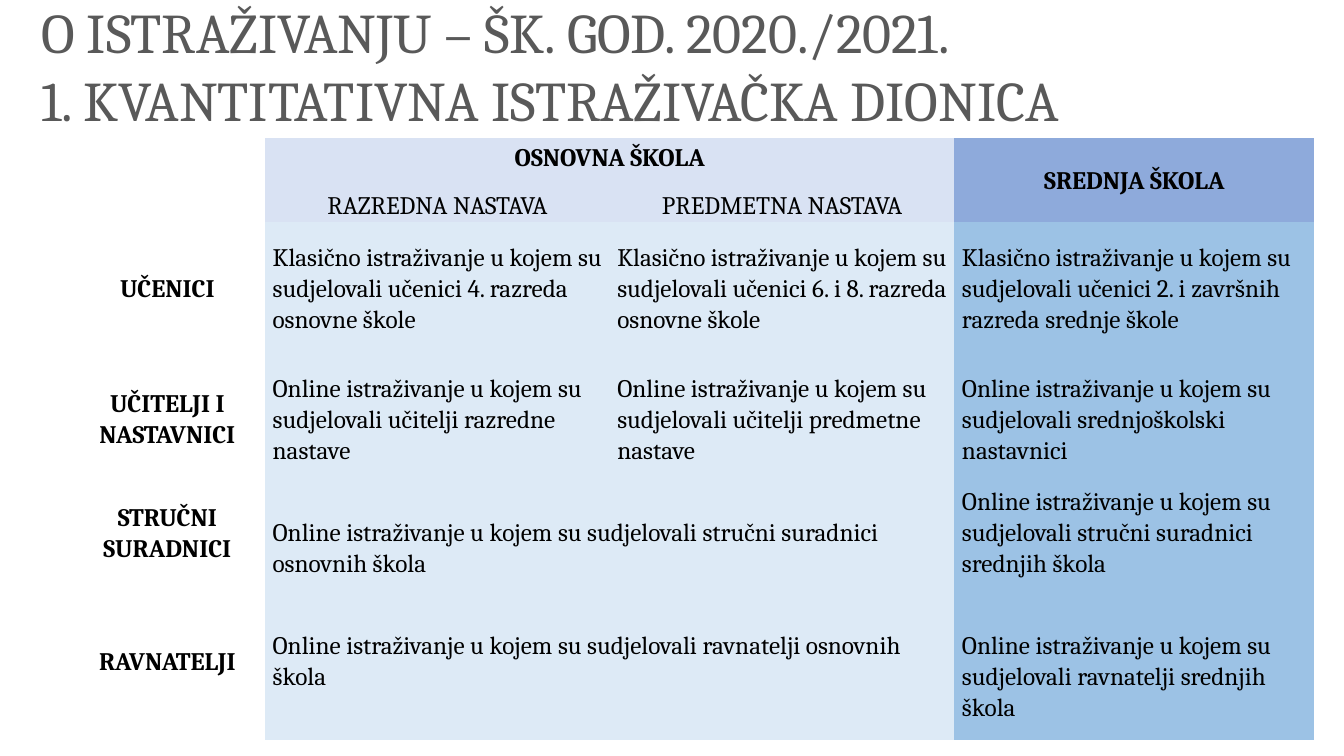
"""Build the slide on the quantitative part of the 2020/2021 school study."""
from pptx import Presentation
from pptx.dml.color import RGBColor
from pptx.enum import text
from pptx.util import Pt

TITLE = ["O ISTRAŽIVANJU – ŠK. GOD. 2020./2021.", "1. KVANTITATIVNA ISTRAŽIVAČKA DIONICA"]
STUDY = [
    ["", "OSNOVNA ŠKOLA", None, "SREDNJA ŠKOLA"],
    ["", "RAZREDNA NASTAVA", "PREDMETNA NASTAVA", None],
    ["UČENICI",
     "Klasično istraživanje u kojem su sudjelovali učenici 4. razreda osnovne škole",
     "Klasično istraživanje u kojem su sudjelovali učenici 6. i 8. razreda osnovne škole",
     "Klasično istraživanje u kojem su sudjelovali učenici 2. i završnih razreda srednje škole"],
    ["UČITELJI I NASTAVNICI",
     "Online istraživanje u kojem su sudjelovali učitelji razredne nastave",
     "Online istraživanje u kojem su sudjelovali učitelji predmetne nastave",
     "Online istraživanje u kojem su sudjelovali srednjoškolski nastavnici"],
    ["STRUČNI SURADNICI",
     "Online istraživanje u kojem su sudjelovali stručni suradnici osnovnih škola",
     None,
     "Online istraživanje u kojem su sudjelovali stručni suradnici srednjih škola"],
    ["RAVNATELJI",
     "Online istraživanje u kojem su sudjelovali ravnatelji osnovnih škola",
     None,
     "Online istraživanje u kojem su sudjelovali ravnatelji srednjih škola"],
]
MERGES = [((0, 1), (0, 2)), ((0, 3), (1, 3)), ((4, 1), (4, 2)), ((5, 1), (5, 2))]
RAISED = {(4, 0), (4, 3), (5, 0), (5, 1)}
COLUMNS = [139.7, 246.2, 246.2, 257]
ROWS = [27.4, 31.6, 94.6, 92, 92, 91.5]
HEADER_ROWS = 2

THEME = {
    "font": "Cambria", "title_size": 40, "cell_size": 18,
    "title": "595959", "ink": "000000",
    "primary_head": "D9E2F3", "primary": "DDEAF6",
    "secondary_head": "8EAADB", "secondary": "9CC2E5",
    "plain_table": "{2D5ABB26-0587-4C30-8999-92F81FD0307C}",
}


def style(paragraph, size, color, bold=False):
    for run in paragraph.runs:
        run.font.name = THEME["font"]
        run.font.size = Pt(size)
        run.font.bold = bold
        run.font.color.rgb = RGBColor.from_string(color)


def add_title(slide):
    heading = slide.shapes.add_textbox(Pt(22.3), Pt(-5), Pt(875.5), Pt(104.4)).text_frame
    heading.word_wrap = True
    heading.text = "\n".join(TITLE)
    for line in heading.paragraphs:
        style(line, THEME["title_size"], THEME["title"])


def fill_cell(cell, row, column, wording):
    header = row < HEADER_ROWS
    cell.margin_left = cell.margin_right = Pt(5.4)
    cell.margin_top = 0
    cell.margin_bottom = Pt(22 if (row, column) in RAISED else 0)
    cell.vertical_anchor = text.MSO_ANCHOR.MIDDLE
    if column == 0:
        cell.fill.background()
    else:
        school = "secondary" if column == 3 else "primary"
        cell.fill.solid()
        cell.fill.fore_color.rgb = RGBColor.from_string(THEME[school + "_head" * header])
    if not wording:
        return
    cell.text_frame.text = wording
    line = cell.text_frame.paragraphs[0]
    line.line_spacing = 1.5 if row == 1 else 1.07
    centred = header or column == 0
    line.alignment = text.PP_ALIGN.CENTER if centred else text.PP_ALIGN.LEFT
    style(line, THEME["cell_size"], THEME["ink"], bold=row == 0 or column == 0)


def add_study(slide):
    frame = slide.shapes.add_table(len(ROWS), len(COLUMNS), Pt(49.7), Pt(98.9),
                                   Pt(sum(COLUMNS)), Pt(sum(ROWS)))
    study = frame.table
    study.first_row = study.horz_banding = False
    study._tbl.tblPr[0].text = THEME["plain_table"]
    for column, width in zip(study.columns, COLUMNS):
        column.width = Pt(width)
    for row, height in zip(study.rows, ROWS):
        row.height = Pt(height)
    for start, end in MERGES:
        study.cell(*start).merge(study.cell(*end))
    for row, entries in enumerate(STUDY):
        for column, wording in enumerate(entries):
            fill_cell(study.cell(row, column), row, column, wording)


def main():
    deck = Presentation()
    deck.slide_width, deck.slide_height = Pt(960), Pt(540)
    slide = deck.slides.add_slide(deck.slide_layouts[6])
    add_title(slide)
    add_study(slide)
    deck.save("out.pptx")


if __name__ == "__main__":
    main()
